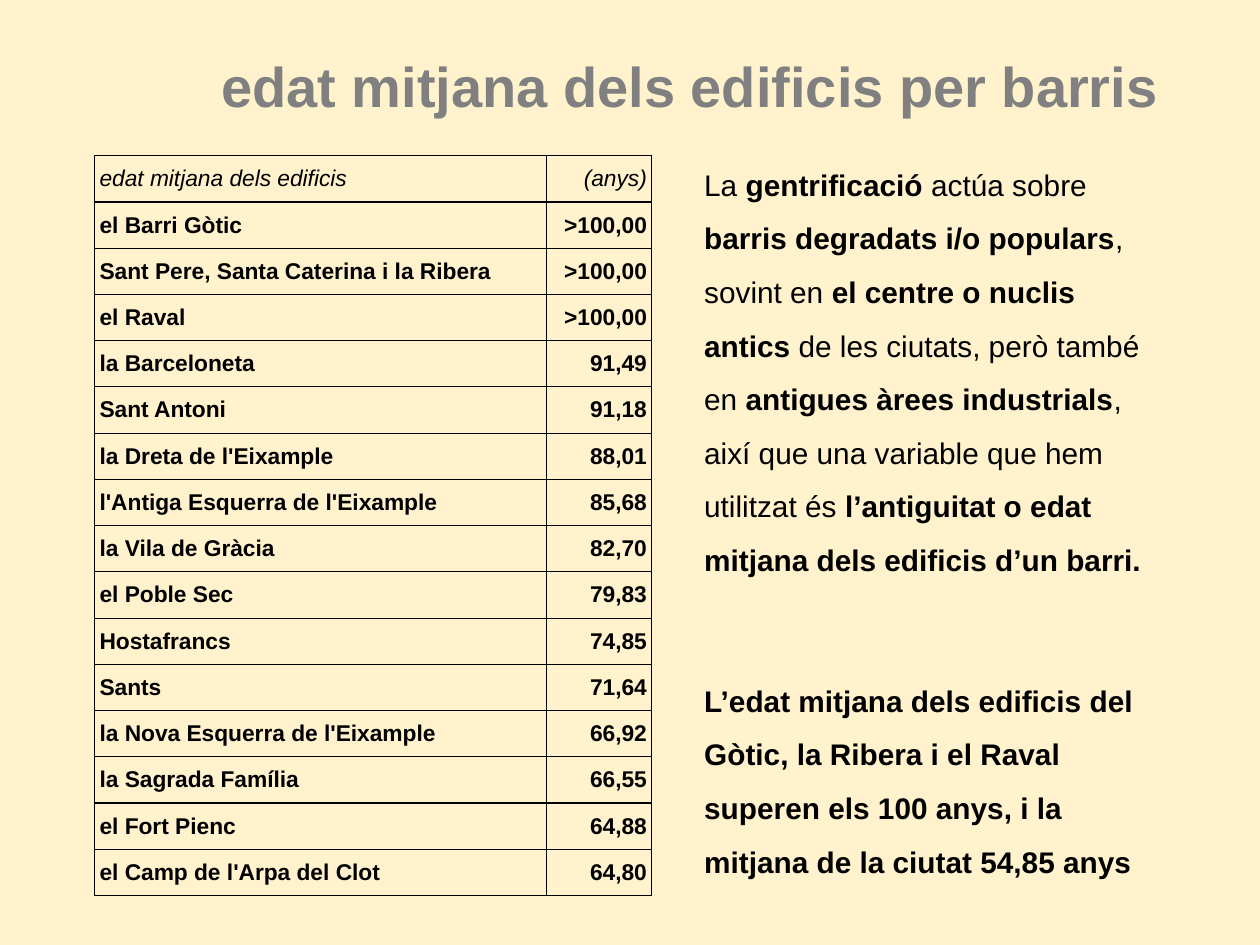
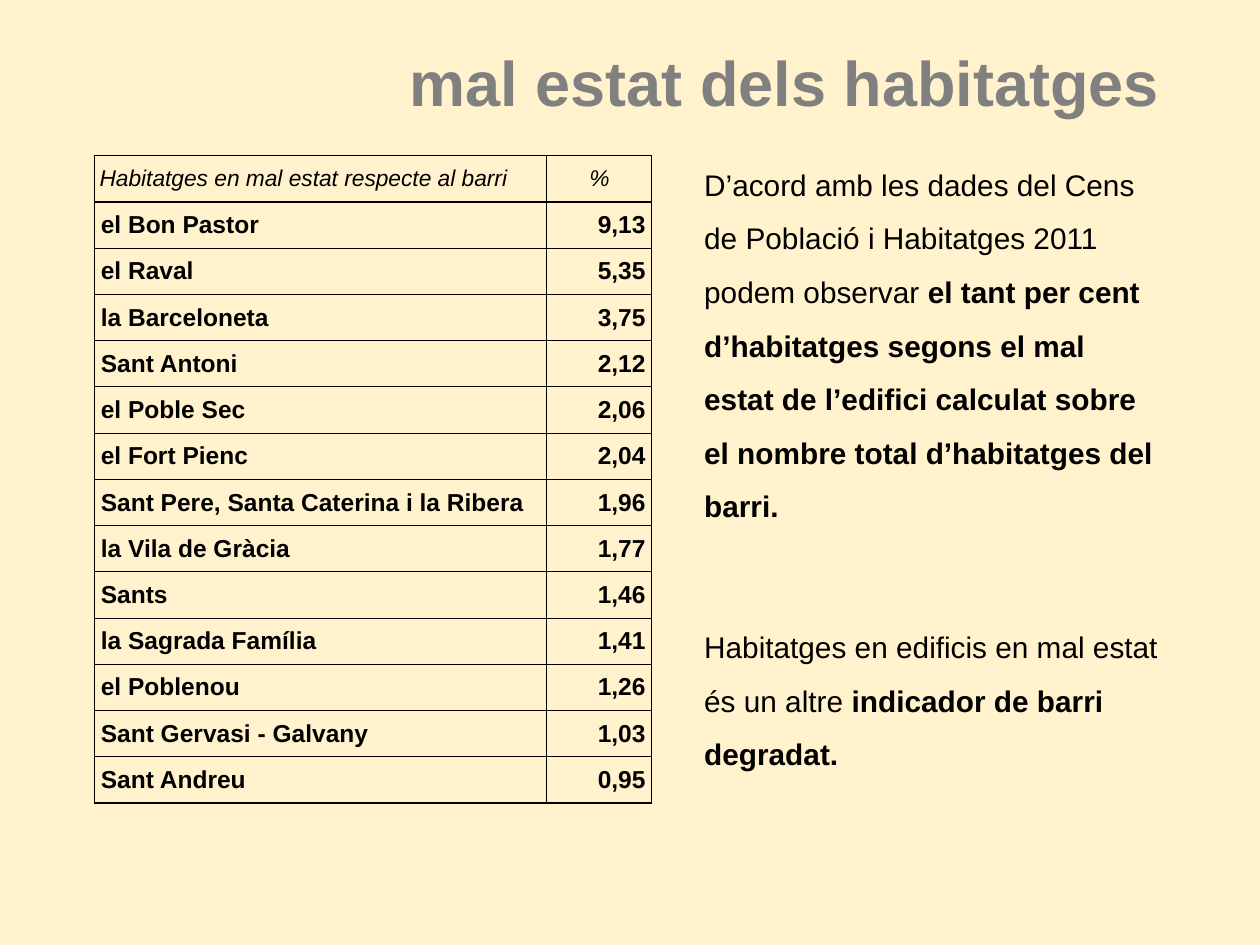
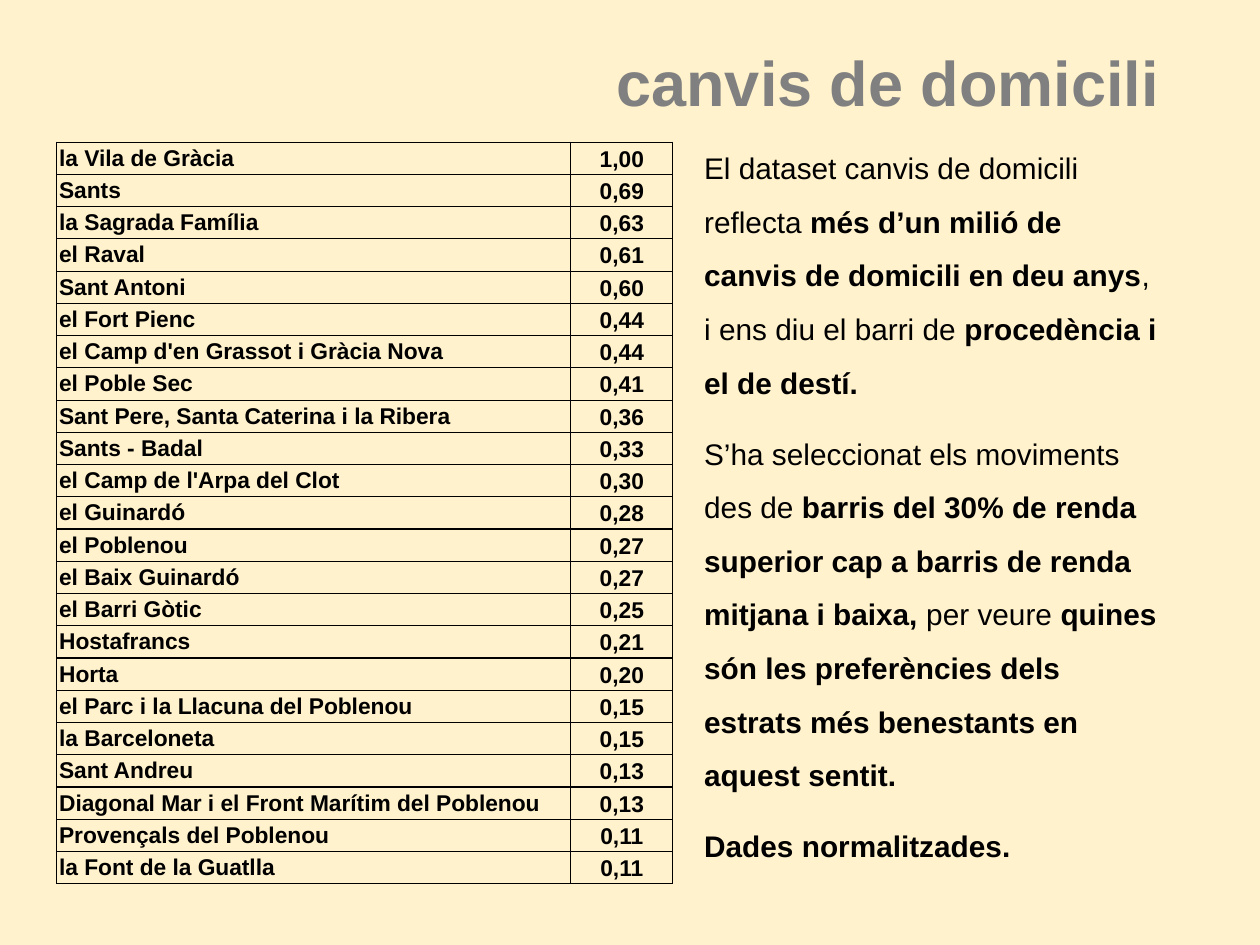
from lxml.etree import SubElement
from pptx import Presentation
from pptx.dml.color import RGBColor
from pptx.enum.text import MSO_ANCHOR as Anchor, PP_ALIGN as Align
from pptx.oxml.ns import qn
from pptx.util import Pt

CREAM = RGBColor(0xFF, 0xF2, 0xCC)
GREY = RGBColor(0x80, 0x80, 0x80)
BLACK = RGBColor(0, 0, 0)
FONT = "Arial"

BODY_SIZE = 17
PARA_GAP = 10
SECTION_GAP = 50
INSET = 3.6

# Bold passages stand between double asterisks.
SLIDES = [
    {
        "title": "edat mitjana dels edificis per barris", "title_size": 32,
        "body_top": 81.4, "body_height": 430.6, "gap": SECTION_GAP,
        "body": [
            "La **gentrificació** actúa sobre **barris degradats i/o populars**, "
            "sovint en **el centre o nuclis antics **de les ciutats, però també en "
            "**antigues àrees industrials**, així que una variable que hem utilitzat "
            "és **l’antiguitat o edat mitjana dels edificis d’un barri.**",
            "**L’edat mitjana dels edificis del Gòtic, la Ribera i el Raval superen "
            "els 100 anys, i la mitjana de la ciutat 54,85 anys**",
        ],
        "table": {"left": 54, "top": 89, "widths": (258.5, 60), "row_height": 26.43,
                  "size": 13, "inset": 2.9, "value_align": Align.RIGHT,
                  "value_anchor": Anchor.MIDDLE, "header_align": Align.RIGHT},
        "header": ("edat mitjana dels edificis", "(anys)"),
        "rows": [
            ("el Barri Gòtic", ">100,00"),
            ("Sant Pere, Santa Caterina i la Ribera", ">100,00"),
            ("el Raval", ">100,00"),
            ("la Barceloneta", "91,49"),
            ("Sant Antoni", "91,18"),
            ("la Dreta de l'Eixample", "88,01"),
            ("l'Antiga Esquerra de l'Eixample", "85,68"),
            ("la Vila de Gràcia", "82,70"),
            ("el Poble Sec", "79,83"),
            ("Hostafrancs", "74,85"),
            ("Sants", "71,64"),
            ("la Nova Esquerra de l'Eixample", "66,92"),
            ("la Sagrada Família", "66,55"),
            ("el Fort Pienc", "64,88"),
            ("el Camp de l'Arpa del Clot", "64,80"),
        ],
    },
    {
        "title": "mal estat dels habitatges", "title_size": 36,
        "body_top": 81.4, "body_height": 430.6, "gap": SECTION_GAP,
        "body": [
            "D’acord amb les dades del Cens de Població i Habitatges 2011 podem "
            "observar **el tant per cent d’habitatges segons el mal estat de l’edifici "
            "calculat sobre el nombre total d’habitatges del barri.**",
            "Habitatges en edificis en mal estat és un altre **indicador de barri "
            "degradat.**",
        ],
        "table": {"left": 54, "top": 89, "widths": (258.5, 60), "row_height": 26.43,
                  "size": 14, "inset": 3.6, "value_align": Align.RIGHT,
                  "value_anchor": Anchor.MIDDLE, "header_align": Align.CENTER},
        "header": ("Habitatges en mal estat respecte al barri", "%"),
        "rows": [
            ("el Bon Pastor", "9,13"),
            ("el Raval", "5,35"),
            ("la Barceloneta", "3,75"),
            ("Sant Antoni", "2,12"),
            ("el Poble Sec", "2,06"),
            ("el Fort Pienc", "2,04"),
            ("Sant Pere, Santa Caterina i la Ribera", "1,96"),
            ("la Vila de Gràcia", "1,77"),
            ("Sants", "1,46"),
            ("la Sagrada Família", "1,41"),
            ("el Poblenou", "1,26"),
            ("Sant Gervasi - Galvany", "1,03"),
            ("Sant Andreu", "0,95"),
        ],
    },
    {
        "title": "canvis de domicili", "title_size": 36,
        "body_top": 72, "body_height": 455, "gap": PARA_GAP,
        "body": [
            "El dataset canvis de domicili reflecta **més d’un milió de canvis de "
            "domicili en deu anys**, i ens diu el barri de **procedència i el de "
            "destí.**",
            "S’ha seleccionat els moviments des de **barris del 30% de renda superior "
            "cap a barris de renda mitjana i baixa, **per veure **quines són les "
            "preferències dels estrats més benestants en aquest sentit.**",
            "**Dades normalitzades.**",
        ],
        "table": {"left": 32.4, "top": 81.2, "widths": (293.8, 58.3),
                  "row_height": 17.9, "size": 13, "inset": 1.4,
                  "value_align": Align.CENTER, "value_anchor": Anchor.BOTTOM},
        "header": None,
        "rows": [
            ("la Vila de Gràcia", "1,00"),
            ("Sants", "0,69"),
            ("la Sagrada Família", "0,63"),
            ("el Raval", "0,61"),
            ("Sant Antoni", "0,60"),
            ("el Fort Pienc", "0,44"),
            ("el Camp d'en Grassot i Gràcia Nova", "0,44"),
            ("el Poble Sec", "0,41"),
            ("Sant Pere, Santa Caterina i la Ribera", "0,36"),
            ("Sants - Badal", "0,33"),
            ("el Camp de l'Arpa del Clot", "0,30"),
            ("el Guinardó", "0,28"),
            ("el Poblenou", "0,27"),
            ("el Baix Guinardó", "0,27"),
            ("el Barri Gòtic", "0,25"),
            ("Hostafrancs", "0,21"),
            ("Horta", "0,20"),
            ("el Parc i la Llacuna del Poblenou", "0,15"),
            ("la Barceloneta", "0,15"),
            ("Sant Andreu", "0,13"),
            ("Diagonal Mar i el Front Marítim del Poblenou", "0,13"),
            ("Provençals del Poblenou", "0,11"),
            ("la Font de la Guatlla", "0,11"),
        ],
    },
]


def set_all(target, **values):
    for name, value in values.items():
        setattr(target, name, value)


def set_margins(target, inset):
    for side in ("left", "top", "right", "bottom"):
        setattr(target, f"margin_{side}", Pt(inset))


def add_span(para, text, size, color=BLACK, bold=False, italic=False):
    span = para.add_run()
    span.text = text
    set_all(span.font, name=FONT, size=Pt(size), bold=bold, italic=italic)
    span.font.color.rgb = color


def add_box(page, left, top, width, height, anchor):
    frame = page.shapes.add_textbox(Pt(left), Pt(top), Pt(width), Pt(height)).text_frame
    set_all(frame, word_wrap=True, vertical_anchor=anchor)
    set_margins(frame, INSET)
    return frame


def add_title(page, text, size):
    para = add_box(page, 54, 13, 612, 59, Anchor.BOTTOM).paragraphs[0]
    set_all(para, alignment=Align.RIGHT, line_spacing=0.9)
    add_span(para, text, size, GREY, bold=True)


def add_body(page, texts, top, height, gap):
    frame = add_box(page, 398.8, top, 267.2, height, Anchor.TOP)
    for index, text in enumerate(texts):
        para = frame.add_paragraph() if index else frame.paragraphs[0]
        set_all(para, line_spacing=1.5, space_before=Pt(gap if index else 0))
        for part, piece in enumerate(text.split("**")):
            if piece:
                add_span(para, piece, BODY_SIZE, bold=part % 2 == 1)


def add_borders(cell):
    properties = cell._tc.get_or_add_tcPr()
    for side in ("lnL", "lnR", "lnT", "lnB"):
        line = SubElement(properties, qn(f"a:{side}"), w=str(Pt(0.75)))
        fill = SubElement(line, qn("a:solidFill"))
        SubElement(fill, qn("a:srgbClr"), val=str(BLACK))


def fill_cell(cell, text, size, inset, align, anchor, **style):
    cell.vertical_anchor = anchor
    set_margins(cell, inset)
    add_borders(cell)
    cell.fill.background()
    para = cell.text_frame.paragraphs[0]
    para.alignment = align
    add_span(para, text, size, **style)


def add_ranking(page, header, rows, look):
    """Draw the table of districts and values, with an optional italic header."""
    lines = [header, *rows] if header else rows
    height = look["row_height"]
    table = page.shapes.add_table(
        len(lines), 2, Pt(look["left"]), Pt(look["top"]),
        Pt(sum(look["widths"])), Pt(height * len(lines))).table
    set_all(table, first_row=False, horz_banding=False)
    for column, width in zip(table.columns, look["widths"]):
        column.width = Pt(width)
    for row, line in zip(table.rows, lines):
        row.height = Pt(height)
        is_header = line is header
        size, inset = (13, 2.9) if is_header else (look["size"], look["inset"])
        value_align = look["header_align" if is_header else "value_align"]
        places = ((Align.LEFT, Anchor.MIDDLE), (value_align, look["value_anchor"]))
        for cell, text, (align, anchor) in zip(row.cells, line, places):
            fill_cell(cell, text, size, inset, align, anchor,
                      bold=not is_header, italic=is_header)


def main():
    deck = Presentation()
    set_all(deck, slide_width=Pt(720), slide_height=Pt(540))
    background = deck.slide_master.background.fill
    background.solid()
    background.fore_color.rgb = CREAM
    for content in SLIDES:
        page = deck.slides.add_slide(deck.slide_layouts[6])
        add_title(page, content["title"], content["title_size"])
        add_body(page, content["body"], content["body_top"],
                 content["body_height"], content["gap"])
        add_ranking(page, content["header"], content["rows"], content["table"])
    deck.save("out.pptx")


if __name__ == "__main__":
    main()
